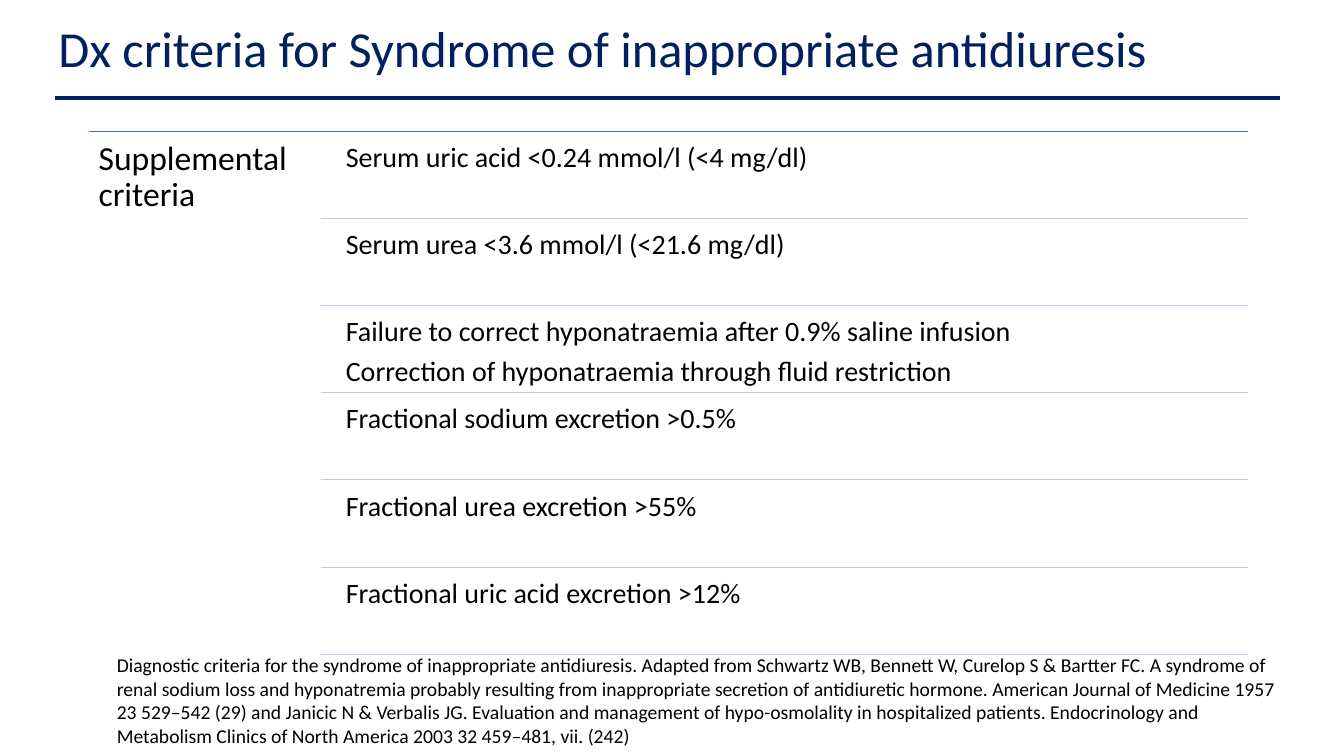
from lxml import etree
from pptx import Presentation
from pptx.dml.color import RGBColor
from pptx.enum import shapes
from pptx.oxml import ns
from pptx.util import Inches, Pt

prs = Presentation()
prs.slide_width, prs.slide_height = Inches(13.33), Inches(7.5)
slide = prs.slides.add_slide(prs.slide_layouts[6])


def add_rule(x1, x2, y, color, weight):
    rule = slide.shapes.add_connector(
        shapes.MSO_CONNECTOR.STRAIGHT, Inches(x1), Inches(y), Inches(x2), Inches(y))
    rule.line.color.rgb = RGBColor.from_string(color)
    rule.line.width = Pt(weight)
    etree.SubElement(rule._element.spPr, ns.qn("a:effectLst"))


def add_text(box, lines, size, color="000000", inset=None, spacing=None, after=None):
    frame = slide.shapes.add_textbox(*[Inches(v) for v in box]).text_frame
    frame.word_wrap = True
    if inset is not None:
        frame.margin_left = frame.margin_right = Inches(inset)
        frame.margin_top = frame.margin_bottom = Inches(inset)
    for i, line in enumerate(lines):
        para = frame.add_paragraph() if i else frame.paragraphs[0]
        para.line_spacing = spacing
        if after is not None:
            para.space_after = Pt(after)
        run = para.add_run()
        run.text = line
        run.font.name = "Calibri"
        run.font.size = Pt(size)
        run.font.color.rgb = RGBColor.from_string(color)


# Criteria heading
left, right, top, pitch = 0.88, 12.38, 1.3, 0.865
add_rule(left, right, top, "4472C4", 0.5)
add_text((left, top, 2.3, 5.23), ["Supplemental criteria"], 24,
         inset=0.1, spacing=0.9, after=8.4)

# Criteria rows, each closed by a thin rule
criteria = [
    ["Serum uric acid <0.24 mmol/l (<4 mg/dl)"],
    ["Serum urea <3.6 mmol/l (<21.6 mg/dl)"],
    ["Failure to correct hyponatraemia after 0.9% saline infusion",
     "Correction of hyponatraemia through fluid restriction"],
    ["Fractional sodium excretion >0.5%"],
    ["Fractional urea excretion >55%"],
    ["Fractional uric acid excretion >12%"],
]
for row, lines in enumerate(criteria):
    row_top = top + row * pitch
    add_text((3.35, row_top + 0.04, 9.03, 0.82), lines, 20,
             inset=0.08, spacing=0.9, after=7)
    add_rule(3.18, right, row_top + pitch, "C1C9E4", 0.5)

# Title and its rule
add_text((0.48, 0.12, 12.37, 0.71),
         ["Dx criteria for Syndrome of inappropriate antidiuresis"], 36, "002060")
add_rule(0.55, 12.7, 0.97, "002060", 3)

# Citation
citation = (
    "Diagnostic criteria for the syndrome of inappropriate antidiuresis. "
    "Adapted from Schwartz WB, Bennett W, Curelop S & Bartter FC. "
    "A syndrome of renal sodium loss and hyponatremia probably resulting from "
    "inappropriate secretion of antidiuretic hormone. "
    "American Journal of Medicine 1957 23 529–542 (29) and Janicic N & Verbalis JG. "
    "Evaluation and management of hypo-osmolality in hospitalized patients. "
    "Endocrinology and Metabolism Clinics of North America 2003 32 459–481, vii. (242)"
)
add_text((1.06, 6.43, 11.79, 1.04), [citation], 14)

prs.save("out.pptx")
